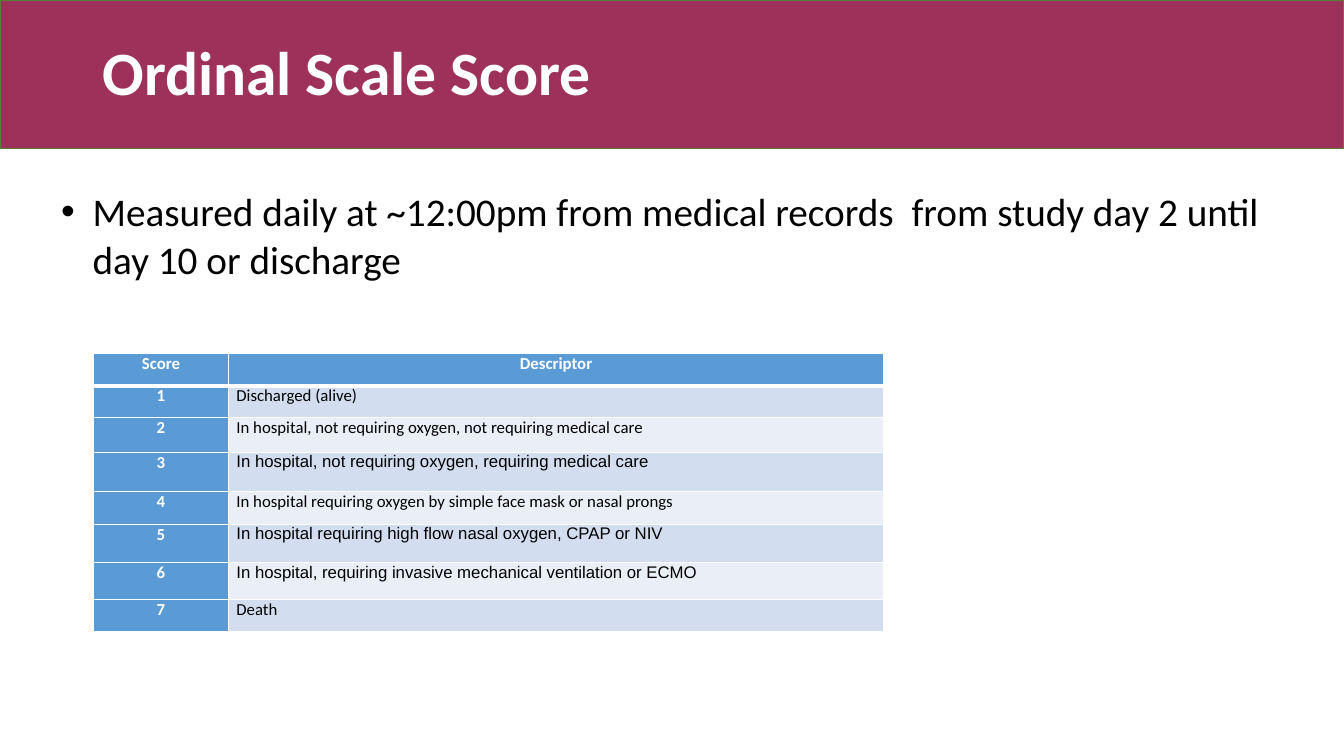
from lxml import etree
from pptx import Presentation
from pptx import util as u
from pptx.dml.color import RGBColor
from pptx.enum import shapes, text
from pptx.oxml import ns

COLOURS = {
    "band": "9E3159",
    "band_edge": "538035",
    "white": "FFFFFF",
    "black": "000000",
    "header": "5B9BD5",
    "odd_row": "D2DEEF",
    "even_row": "EAEFF7",
}
BULLET = "Measured daily at ~12:00pm from medical records  from study day 2 until day 10 or discharge"
SCORES = [
    ("Score", "Descriptor", "Calibri", 23),
    ("1", "Discharged (alive)", "Calibri", 23),
    ("2", "In hospital, not requiring oxygen, not requiring medical care", "Calibri", 24.5),
    ("3", "In hospital, not requiring oxygen, requiring medical care", "Arial", 28),
    ("4", "In hospital requiring oxygen by simple face mask or nasal prongs", "Calibri", 23.5),
    ("5", "In hospital requiring high flow nasal oxygen, CPAP or NIV", "Arial", 27.5),
    ("6", "In hospital, requiring invasive mechanical ventilation or ECMO", "Arial", 26.5),
    ("7", "Death", "Calibri", 23),
]
COLUMN_WIDTHS = (97, 467.5)


def colour(name):
    """Return the named colour."""
    return RGBColor.from_string(COLOURS[name])


def place(box, left, top, width, height):
    """Move and size a shape, in points."""
    box.left, box.top, box.width, box.height = map(u.Pt, (left, top, width, height))


def write(frame, words, size, tint, font="Calibri", bold=False, align=text.PP_ALIGN.LEFT):
    """Set the text of a frame and format it, returning its paragraph."""
    frame.text = words
    para = frame.paragraphs[0]
    para.alignment = align
    para.space_before = u.Pt(0)
    for span in para.runs:
        span.font.size = u.Pt(size)
        span.font.name = font
        span.font.bold = bold
        span.font.color.rgb = colour(tint)
    return para


def add_title(page, words):
    """Put the title on a coloured band across the top."""
    title = page.shapes.title
    band = page.shapes.add_shape(shapes.MSO_SHAPE.RECTANGLE, 0, 0, u.Pt(960), u.Pt(106))
    band.shadow.inherit = False
    band.fill.solid()
    band.fill.fore_color.rgb = colour("band")
    band.line.color.rgb = colour("band_edge")
    band.line.width = u.Pt(1)
    title._element.addprevious(band._element)
    place(title, 66, 1.5, 828, 104.5)
    para = write(title.text_frame, words, 44, "white", bold=True)
    para.line_spacing = 0.9
    title.text_frame.vertical_anchor = text.MSO_ANCHOR.MIDDLE


def add_bullet(page, words):
    """Fill the body placeholder with one bulleted statement."""
    body = page.placeholders[1]
    place(body, 36.5, 130.5, 890, 97)
    body.text_frame.auto_size = text.MSO_AUTO_SIZE.NONE
    para = write(body.text_frame, words, 28, "black")
    properties = para._p.get_or_add_pPr()
    properties.set("marL", str(u.Pt(22.5)))
    properties.set("indent", str(u.Pt(-22.5)))
    etree.SubElement(properties, ns.qn("a:buFont"), typeface="Arial")
    etree.SubElement(properties, ns.qn("a:buChar"), char="•")


def add_borders(cell, widths):
    """Draw white borders of the given widths around a cell."""
    properties = cell._tc.get_or_add_tcPr()
    for place_in_order, (side, width) in enumerate(widths.items()):
        line = etree.Element(ns.qn(f"a:ln{side}"), w=str(u.Pt(width)))
        fill = etree.SubElement(line, ns.qn("a:solidFill"))
        etree.SubElement(fill, ns.qn("a:srgbClr"), val=COLOURS["white"])
        properties.insert(place_in_order, line)


def fill_cell(cell, words, fill, font, heading, row):
    """Write and format one table cell."""
    cell.margin_left = cell.margin_right = u.Pt(5.4)
    cell.margin_top = cell.margin_bottom = 0
    cell.fill.solid()
    cell.fill.fore_color.rgb = colour(fill)
    align = text.PP_ALIGN.CENTER if heading else text.PP_ALIGN.LEFT
    write(cell.text_frame, words, 12, "white" if heading else "black", font, heading, align)
    add_borders(cell, {"L": 1, "R": 1, "T": 3 if row == 1 else 1, "B": 3 if row == 0 else 1})


def add_scores(page):
    """Add the table of scores and descriptors."""
    height = sum(score[3] for score in SCORES)
    frame = page.shapes.add_table(
        len(SCORES), 2, u.Pt(66.5), u.Pt(252.5), u.Pt(sum(COLUMN_WIDTHS)), u.Pt(height))
    table = frame.table
    for column, width in zip(table.columns, COLUMN_WIDTHS):
        column.width = u.Pt(width)
    for row, (score, descriptor, font, row_height) in enumerate(SCORES):
        table.rows[row].height = u.Pt(row_height)
        stripe = "odd_row" if row % 2 else "even_row"
        fill_cell(table.cell(row, 0), score, "header", "Calibri", True, row)
        fill_cell(table.cell(row, 1), descriptor, stripe if row else "header", font, row == 0, row)


def main():
    """Build and save the slide."""
    deck = Presentation()
    deck.slide_width, deck.slide_height = u.Pt(960), u.Pt(540)
    page = deck.slides.add_slide(deck.slide_layouts[1])
    add_title(page, "Ordinal Scale Score")
    add_scores(page)
    add_bullet(page, BULLET)
    deck.save("out.pptx")


if __name__ == "__main__":
    main()
